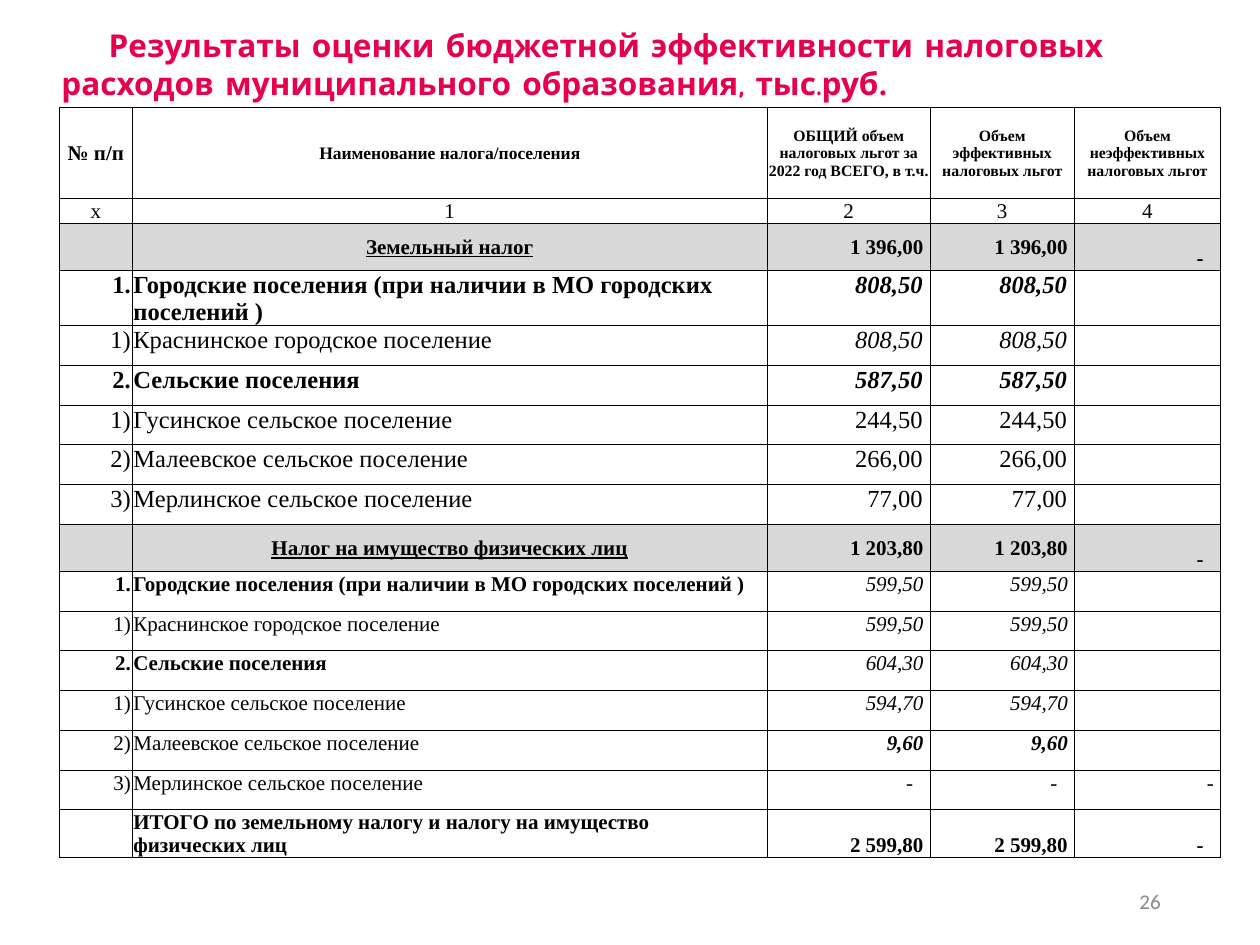
from dataclasses import dataclass, field

from lxml import etree
from pptx import Presentation, util as u
from pptx.dml.color import RGBColor
from pptx.enum import text as t
from pptx.oxml import ns

COLORS = {"ink": "000000", "band": "D8D8D8", "title": "E6004D", "page": "898989"}
SERIF, SANS, DISPLAY = "Times New Roman", "Calibri", "Comic Neue"
LEFT, CENTER, RIGHT = t.PP_ALIGN.LEFT, t.PP_ALIGN.CENTER, t.PP_ALIGN.RIGHT
TOP, MIDDLE, BOTTOM = t.MSO_ANCHOR.TOP, t.MSO_ANCHOR.MIDDLE, t.MSO_ANCHOR.BOTTOM
BOLD, ITALIC = {"bold": True}, {"italic": True}
BOLD_ITALIC = BOLD | ITALIC
HEADING = BOLD | {"underline": True}
COLUMN_WIDTHS = (41.5, 363, 93, 82.5, 83.5)
CELL_INSET = 0.75
BODY_HEIGHT = 22.35
BAND_HEIGHT = 26.85


@dataclass
class Cell:
    text: str = ""
    size: float = 12
    style: dict = field(default_factory=dict)
    align: t.PP_ALIGN = CENTER
    anchor: t.MSO_ANCHOR = MIDDLE
    pad: float = 0


@dataclass
class Row:
    height: float
    cells: list[Cell]
    fill: str | None = None


def apply_format(target, values: dict) -> None:
    for name, value in values.items():
        setattr(target, name, value)


def add_span(para, content: str, font: str, size: float, color: str, style: dict) -> None:
    span = para.add_run()
    span.text = content
    apply_format(span.font, {"name": font, "size": u.Pt(size)} | style)
    span.font.color.rgb = RGBColor.from_string(COLORS[color])


def amount_cell(value: str, size: float = 12, style: dict | None = None,
                anchor: t.MSO_ANCHOR = TOP, pad: float | None = None) -> Cell:
    """Right-aligned amount; a dash stands further from the edge than digits."""
    if pad is None:
        pad = 9 if value == "-" else size / 4
    return Cell(value, size, style or {}, RIGHT, anchor, pad)


def tax_row(name: str, amount: str) -> Row:
    amounts = [amount_cell(amount, 12, BOLD, MIDDLE) for _ in range(2)]
    dash = amount_cell("-", 12, BOLD, BOTTOM)
    return Row(BAND_HEIGHT, [Cell(), Cell(name, 12, HEADING), *amounts, dash], "band")


def settlement_row(number: str, name: str, amount: str, size: float, style: dict,
                   height: float = BODY_HEIGHT, ineffective: str = "") -> Row:
    """Group rows, numbered with a dot, have bold labels."""
    label = BOLD if number.endswith(".") else {}
    return Row(height, [
        Cell(number, size, label, RIGHT, TOP),
        Cell(name, size, label, LEFT, TOP),
        amount_cell(amount, size, style),
        amount_cell(amount, size, style),
        amount_cell(ineffective, size, style, pad=3),
    ])


def table_rows() -> list[Row]:
    headers = (
        ("№ п/п", 12),
        ("Наименование налога/поселения", 10),
        ("ОБЩИЙ объем налоговых льгот за 2022 год ВСЕГО, в т.ч.", 9),
        ("Объем эффективных налоговых льгот", 9),
        ("Объем неэффективных налоговых льгот", 9),
    )
    urban = "Городские поселения (при наличии в МО городских поселений )"
    town = "Краснинское городское поселение"
    rural = "Сельские поселения"
    villages = [f"{name} сельское поселение" for name in ("Гусинское", "Малеевское", "Мерлинское")]
    total = "ИТОГО по земельному налогу и налогу на имущество физических лиц"
    return [
        Row(52, [Cell(name, size, BOLD) for name, size in headers]),
        Row(13.7, [Cell(mark) for mark in "х1234"]),
        tax_row("Земельный налог", "1 396,00"),
        settlement_row("1.", urban, "808,50", 14, BOLD_ITALIC, 31.4),
        settlement_row("1)", town, "808,50", 14, ITALIC),
        settlement_row("2.", rural, "587,50", 14, BOLD_ITALIC),
        settlement_row("1)", villages[0], "244,50", 14, {}),
        settlement_row("2)", villages[1], "266,00", 14, {}),
        settlement_row("3)", villages[2], "77,00", 14, {}),
        tax_row("Налог на имущество физических лиц", "1 203,80"),
        settlement_row("1.", urban, "599,50", 12, ITALIC),
        settlement_row("1)", town, "599,50", 12, ITALIC),
        settlement_row("2.", rural, "604,30", 12, ITALIC),
        settlement_row("1)", villages[0], "594,70", 12, ITALIC),
        settlement_row("2)", villages[1], "9,60", 12, BOLD_ITALIC),
        settlement_row("3)", villages[2], "-", 12, {}, ineffective="-"),
        Row(27.4, [Cell(), Cell(total, 12, BOLD, LEFT, BOTTOM)]
            + [amount_cell(value, 12, BOLD, BOTTOM) for value in ("2 599,80", "2 599,80", "-")]),
    ]


def add_borders(cell) -> None:
    properties = cell._tc.get_or_add_tcPr()
    for side in ("lnL", "lnR", "lnT", "lnB"):
        line = etree.SubElement(properties, ns.qn(f"a:{side}"), w=str(u.Pt(0.5)))
        solid = etree.SubElement(line, ns.qn("a:solidFill"))
        etree.SubElement(solid, ns.qn("a:srgbClr"), val=COLORS["ink"])


def fill_cell(cell, content: Cell, fill: str | None) -> None:
    apply_format(cell, {
        "margin_left": u.Pt(CELL_INSET),
        "margin_top": u.Pt(CELL_INSET),
        "margin_right": u.Pt(CELL_INSET + content.pad),
        "margin_bottom": 0,
        "vertical_anchor": content.anchor,
    })
    add_borders(cell)
    if fill:
        cell.fill.solid()
        cell.fill.fore_color.rgb = RGBColor.from_string(COLORS[fill])
    else:
        cell.fill.background()
    if content.text:
        para = cell.text_frame.paragraphs[0]
        para.alignment = content.align
        add_span(para, content.text, SERIF, content.size, "ink", content.style)


def add_tax_table(page, rows: list[Row]) -> None:
    frame = page.shapes.add_table(
        len(rows), len(COLUMN_WIDTHS), u.Pt(34), u.Pt(61.3),
        u.Pt(sum(COLUMN_WIDTHS)), u.Pt(sum(row.height for row in rows)))
    table = frame.table
    apply_format(table, {"first_row": False, "horz_banding": False})
    for column, width in zip(table.columns, COLUMN_WIDTHS):
        column.width = u.Pt(width)
    for index, row in enumerate(rows):
        table.rows[index].height = u.Pt(row.height)
        for cell, content in zip(table.rows[index].cells, row.cells):
            fill_cell(cell, content, row.fill)


def add_text_box(page, left: float, top: float, width: float, height: float, frame_format: dict):
    """Return the first paragraph of a new wrapping text box."""
    box = page.shapes.add_textbox(u.Pt(left), u.Pt(top), u.Pt(width), u.Pt(height))
    apply_format(box.text_frame, {"word_wrap": True} | frame_format)
    return box.text_frame.paragraphs[0]


def add_title(page) -> None:
    para = add_text_box(page, 28, 11.5, 658, 51, {"auto_size": t.MSO_AUTO_SIZE.SHAPE_TO_FIT_TEXT})
    para._p.get_or_add_pPr().set("indent", str(u.Pt(27)))
    title = ("Результаты оценки бюджетной эффективности налоговых расходов "
             "муниципального образования, тыс.руб")
    add_span(para, title, DISPLAY, 18, "title", BOLD)
    add_span(para, ".", SERIF, 18, "title", BOLD)


def add_page_number(page) -> None:
    para = add_text_box(page, 508.3, 500.4, 162, 28.8, {"vertical_anchor": MIDDLE})
    para.alignment = RIGHT
    add_span(para, "26", SANS, 12, "page", {})


def main() -> None:
    deck = Presentation()
    apply_format(deck, {"slide_width": u.Pt(720), "slide_height": u.Pt(540)})
    page = deck.slides.add_slide(deck.slide_layouts[6])
    add_tax_table(page, table_rows())
    add_page_number(page)
    add_title(page)
    deck.save("out.pptx")


if __name__ == "__main__":
    main()
